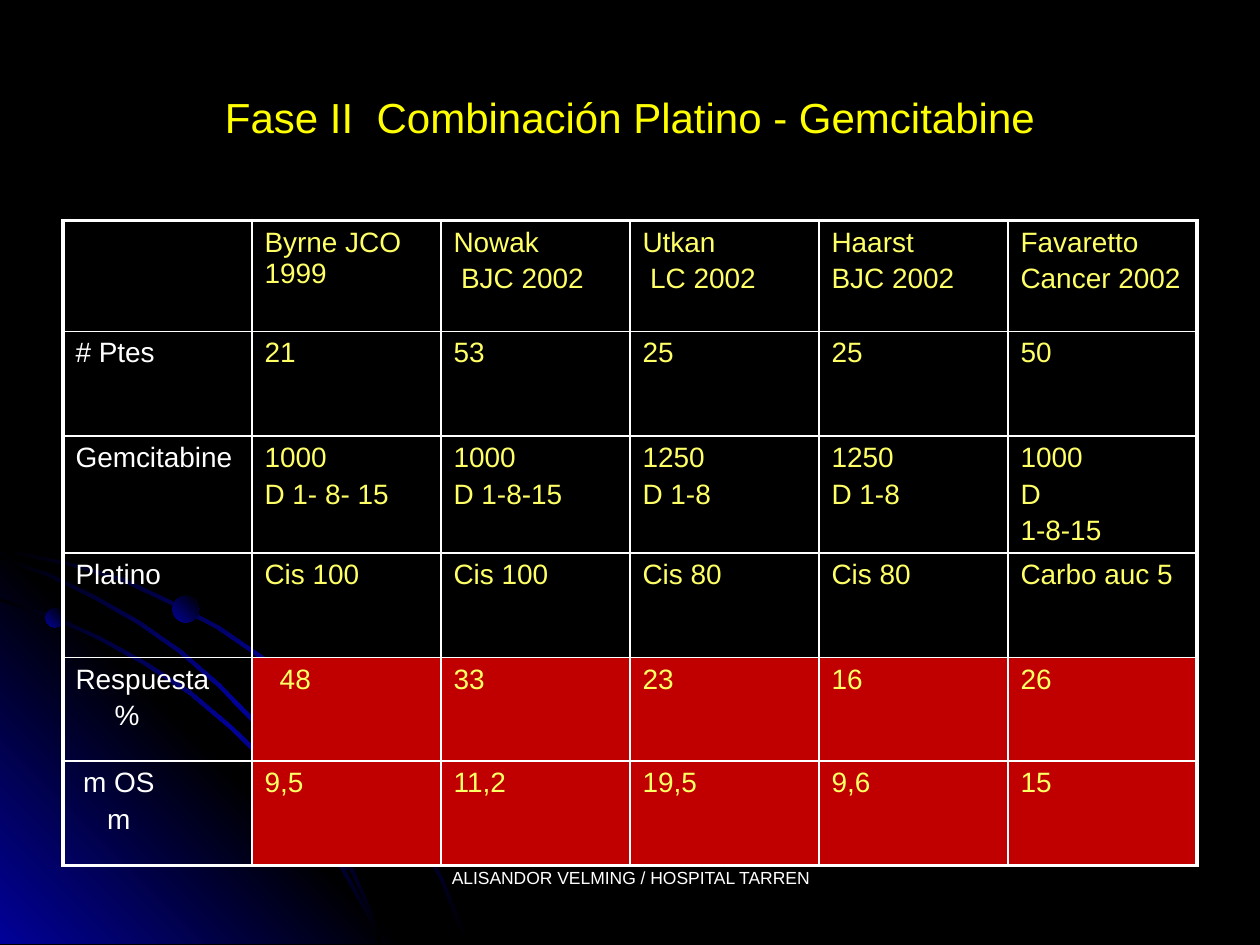
from pptx import Presentation
from pptx.dml.color import RGBColor
from pptx.enum.shapes import MSO_SHAPE
from pptx.enum.text import MSO_ANCHOR, PP_ALIGN
from pptx.oxml import parse_xml
from pptx.oxml.ns import nsdecls, qn
from pptx.oxml.xmlchemy import OxmlElement
from pptx.util import Inches, Pt

ELLIPSE = MSO_SHAPE.OVAL
MIDDLE = MSO_ANCHOR.MIDDLE
CENTER = PP_ALIGN.CENTER
TITLE_ONLY = 5

BLACK = RGBColor(0x00, 0x00, 0x00)
NAVY = RGBColor(0x01, 0x01, 0x99)
WHITE = RGBColor(0xFF, 0xFF, 0xFF)
YELLOW = RGBColor(0xFF, 0xFF, 0x00)
PALE_YELLOW = RGBColor(0xFF, 0xFF, 0x66)
RED = RGBColor(0xC0, 0x00, 0x00)

FONT = "Arial"
THIN, THICK = 1, 2.25

BOTTOM = 7.49
ARC_THICKNESS = 0.02
OUTER_ARC = [
    (0, 4.35), (0.57, 4.47), (0.98, 4.59), (1.36, 4.77), (1.74, 4.97), (2.09, 5.21),
    (2.42, 5.48), (2.72, 5.78), (3, 6.11), (3.25, 6.48), (3.39, 6.73), (3.52, 6.98),
    (3.62, 7.23), (3.72, BOTTOM),
]
INNER_ARC = [
    (0, 4.75), (0.41, 4.88), (0.79, 5.05), (1.17, 5.26), (1.52, 5.49), (1.84, 5.76),
    (2.15, 6.06), (2.42, 6.4), (2.66, 6.76), (2.86, 7.12), (2.96, 7.3), (3.03, BOTTOM),
]
MIDDLE_ARC = [
    (0, 4.42), (0.39, 4.55), (0.76, 4.73), (1.11, 4.93), (1.44, 5.16), (1.75, 5.43),
    (2.04, 5.73), (2.29, 6.03), (2.54, 6.39), (2.69, 6.65), (2.82, 6.93), (2.94, 7.2),
    (3.03, BOTTOM),
]
CORNER = [(3.22, BOTTOM), (0, BOTTOM), (0, 4.27)]
DOTS = [  # left, top, diameter, gradient angle
    (0.36, 4.83, 0.15, 315),
    (2.67, 6.74, 0.16, 45),
    (1.37, 4.73, 0.21, 315),
]

TRIALS = [
    ["", "Byrne JCO 1999", "Nowak\nBJC 2002", "Utkan\nLC 2002", "Haarst\nBJC 2002",
     "Favaretto\nCancer 2002"],
    ["# Ptes", "21", "53", "25", "25", "50"],
    ["Gemcitabine", "1000\nD 1- 8- 15", "1000\nD 1-8-15", "1250\nD 1-8", "1250\nD 1-8",
     "1000\nD\n1-8-15"],
    ["Platino", "Cis 100", "Cis 100", "Cis 80", "Cis 80", "Carbo auc 5"],
    ["Respuesta\n%", "48", "33", "23", "16", "26"],
    ["m OS\nm", "9,5", "11,2", "19,5", "9,6", "15"],
]
ROW_HEIGHTS = [0.88, 0.83, 0.93, 0.83, 0.82, 0.83]
COLUMN_WIDTH = 1.5
FIRST_RESULT_ROW = 4
INDENTS = {  # (row, column, line): inches
    (0, 2, 1): 0.06, (0, 3, 1): 0.06, (4, 0, 1): 0.31,
    (4, 1, 0): 0.12, (5, 0, 0): 0.06, (5, 0, 1): 0.25,
}


def set_font(paragraph, size, color):
    font = paragraph.font
    font.name, font.size, font.bold = FONT, Pt(size), False
    font.color.rgb = color


def apply_gradient(shape, colors, angle):
    """Fill with evenly spaced colours; the angle runs clockwise in degrees."""
    shape.shadow.inherit = False
    shape.line.fill.background()
    shape.fill.solid()
    stops = "".join(
        f'<a:gs pos="{100000 * index // (len(colors) - 1)}"><a:srgbClr val="{color}"/></a:gs>'
        for index, color in enumerate(colors))
    gradient = parse_xml(
        f'<a:gradFill {nsdecls("a")} rotWithShape="1"><a:gsLst>{stops}</a:gsLst>'
        f'<a:lin ang="{angle * 60000}" scaled="1"/></a:gradFill>')
    properties = shape._element.spPr
    properties.replace(properties.find(qn("a:solidFill")), gradient)


def add_outline(slide, points, colors, angle):
    start, *others = [(Inches(x), Inches(y)) for x, y in points]
    builder = slide.shapes.build_freeform(*start)
    builder.add_line_segments(others, close=True)
    apply_gradient(builder.convert_to_shape(), colors, angle)


def add_arc(slide, upper_edge):
    """Draw a thin band whose lower edge is the upper one moved down and left."""
    lower_edge = [(max(0, x - ARC_THICKNESS), min(BOTTOM, y + ARC_THICKNESS))
                  for x, y in reversed(upper_edge)]
    add_outline(slide, upper_edge + lower_edge, (BLACK, NAVY, BLACK), 45)


def add_dot(slide, left, top, diameter, angle):
    dot = slide.shapes.add_shape(
        ELLIPSE, Inches(left), Inches(top), Inches(diameter), Inches(diameter))
    apply_gradient(dot, (NAVY, BLACK), angle)


def add_decoration(slide):
    add_arc(slide, OUTER_ARC)
    add_outline(slide, CORNER, (NAVY, BLACK, NAVY), 315)
    add_arc(slide, INNER_ARC)
    add_arc(slide, MIDDLE_ARC)
    for dot in DOTS:
        add_dot(slide, *dot)


def set_title(slide, text):
    title = slide.shapes.title
    title.left, title.top = Inches(0.5), Inches(0.3)
    title.width, title.height = Inches(9), Inches(1.25)
    title.text_frame.text = text
    title.text_frame.vertical_anchor = MIDDLE
    paragraph = title.text_frame.paragraphs[0]
    paragraph.alignment = CENTER
    set_font(paragraph, 24, YELLOW)


def set_borders(cell, widths):
    """Draw white borders, with widths in the order left, right, top, bottom."""
    properties = cell._tc.get_or_add_tcPr()
    for side, width in zip("LRTB", widths):
        line = OxmlElement(f"a:ln{side}")
        line.set("w", str(Pt(width)))
        fill = OxmlElement("a:solidFill")
        color = OxmlElement("a:srgbClr")
        color.set("val", str(WHITE))
        fill.append(color)
        line.append(fill)
        properties.append(line)


def fill_cell(cell, text, row, column):
    is_edge = (column == 0, column == len(TRIALS[0]) - 1, row == 0, row == len(TRIALS) - 1)
    set_borders(cell, [THICK if edge else THIN for edge in is_edge])
    if row >= FIRST_RESULT_ROW and column > 0:
        cell.fill.solid()
        cell.fill.fore_color.rgb = RED
    else:
        cell.fill.background()
    cell.text_frame.text = text
    for line, paragraph in enumerate(cell.text_frame.paragraphs):
        set_font(paragraph, 16, PALE_YELLOW if column else WHITE)
        paragraph.space_before = Pt(3.2)
        indent = INDENTS.get((row, column, line))
        if indent:
            paragraph._p.get_or_add_pPr().set("marL", str(Inches(indent)))


def add_trials_table(slide):
    column_count = len(TRIALS[0])
    table = slide.shapes.add_table(
        len(TRIALS), column_count, Inches(0.5), Inches(1.75),
        Inches(COLUMN_WIDTH * column_count), Inches(sum(ROW_HEIGHTS))).table
    table.first_row = table.horz_banding = False
    for column in table.columns:
        column.width = Inches(COLUMN_WIDTH)
    for row, (texts, height) in enumerate(zip(TRIALS, ROW_HEIGHTS)):
        table.rows[row].height = Inches(height)
        for column, text in enumerate(texts):
            fill_cell(table.cell(row, column), text, row, column)


def add_footer(slide, text):
    box = slide.shapes.add_textbox(Inches(3.42), Inches(6.83), Inches(3.17), Inches(0.5))
    box.text_frame.word_wrap = True
    box.text_frame.text = text
    paragraph = box.text_frame.paragraphs[0]
    paragraph.alignment = CENTER
    set_font(paragraph, 10, WHITE)


def main():
    presentation = Presentation()
    presentation.slide_width, presentation.slide_height = Inches(10), Inches(7.5)
    slide = presentation.slides.add_slide(presentation.slide_layouts[TITLE_ONLY])
    slide.background.fill.solid()
    slide.background.fill.fore_color.rgb = BLACK
    add_decoration(slide)
    set_title(slide, "Fase II  Combinación Platino - Gemcitabine")
    add_trials_table(slide)
    add_footer(slide, "ALISANDOR VELMING / HOSPITAL TARREN")
    presentation.save("out.pptx")


if __name__ == "__main__":
    main()
